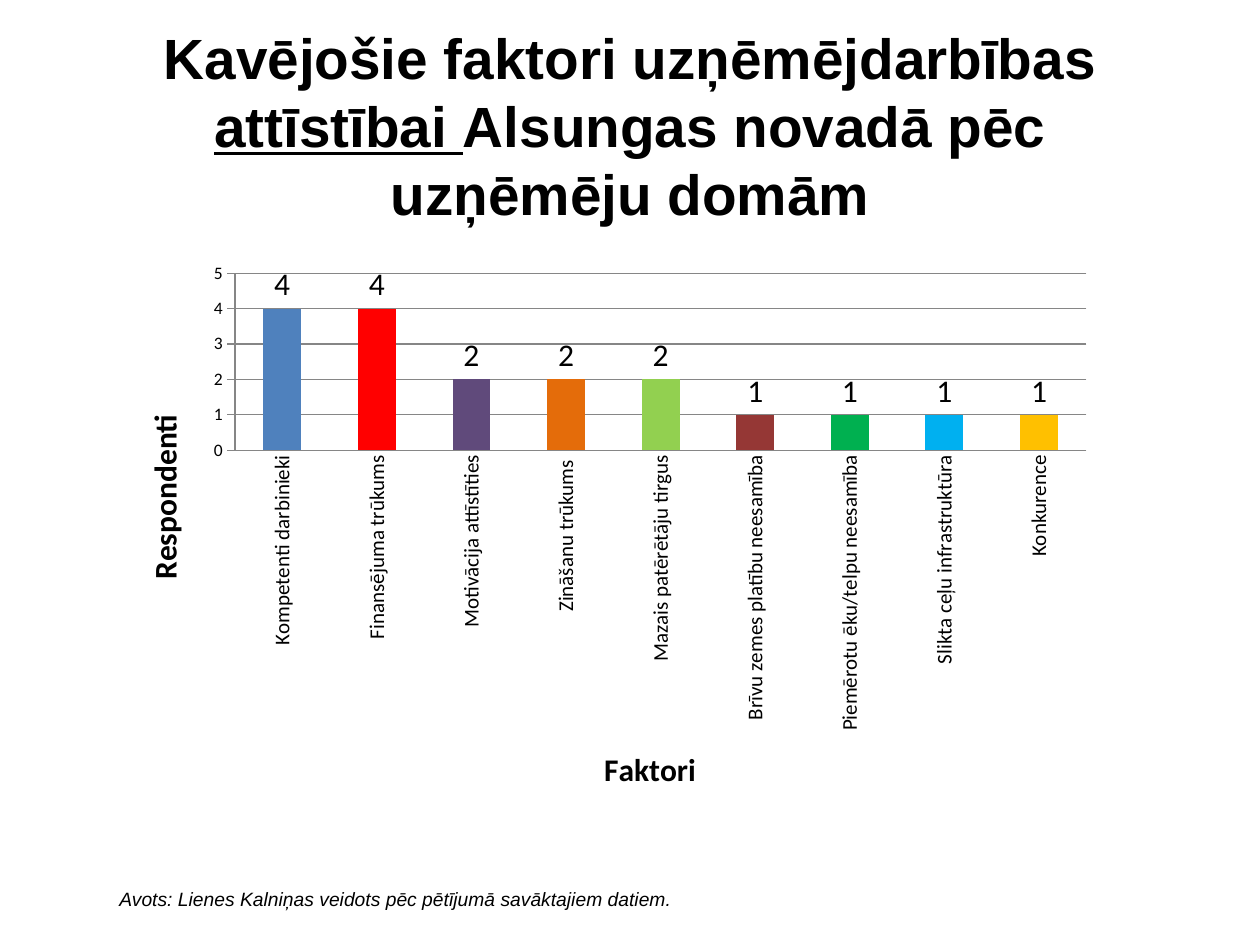
from pptx import Presentation
from pptx.chart.data import CategoryChartData
from pptx.dml.color import RGBColor
from pptx.enum.chart import XL_CHART_TYPE, XL_LABEL_POSITION, XL_TICK_MARK
from pptx.enum.text import MSO_ANCHOR, MSO_AUTO_SIZE, PP_ALIGN
from pptx.util import Pt

COLUMN = XL_CHART_TYPE.COLUMN_CLUSTERED
OUT_END = XL_LABEL_POSITION.OUTSIDE_END
NO_TICK = XL_TICK_MARK.NONE
OUT_TICK = XL_TICK_MARK.OUTSIDE
MIDDLE = MSO_ANCHOR.MIDDLE
FIT = MSO_AUTO_SIZE.SHAPE_TO_FIT_TEXT
NO_FIT = MSO_AUTO_SIZE.NONE
CENTER = PP_ALIGN.CENTER

HEX = {
    "text": "000000", "grid": "868686", "blue": "4F81BD", "red": "FF0000",
    "plum": "604A7B", "orange": "E46C0A", "lime": "92D050", "brown": "953735",
    "green": "00B050", "sky": "00B0F0", "gold": "FFC000",
}
BARS = [
    ("Kompetenti darbinieki", 4, "blue"),
    ("Finansējuma trūkums", 4, "red"),
    ("Motivācija attīstīties", 2, "plum"),
    ("Zināšanu trūkums ", 2, "orange"),
    ("Mazais patērētāju tirgus", 2, "lime"),
    ("Brīvu zemes platību neesamība", 1, "brown"),
    ("Piemērotu ēku/telpu neesamība", 1, "green"),
    ("Slikta ceļu infrastruktūra", 1, "sky"),
    ("Konkurence", 1, "gold"),
]


def shade(name):
    return RGBColor.from_string(HEX[name])


def style(font, size, face="Calibri", bold=False, italic=False, under=False):
    font.name, font.size = face, Pt(size)
    font.bold, font.italic, font.underline = bold, italic, under
    font.color.rgb = shade("text")


def write(para, text, **look):
    run = para.add_run()
    run.text = text
    style(run.font, **look)


def add_title(slide):
    title = slide.shapes.title
    title.left, title.top = Pt(36), Pt(49)
    title.width, title.height = Pt(648), Pt(90.7)
    frame = title.text_frame
    frame.word_wrap, frame.auto_size = True, NO_FIT
    frame.vertical_anchor = MIDDLE
    frame.margin_bottom = Pt(49.5)
    para = frame.paragraphs[0]
    para.alignment, para.line_spacing = CENTER, Pt(39)
    look = {"size": 32.4, "face": "Arial", "bold": True}
    write(para, "Kavējošie faktori uzņēmējdarbības ", **look)
    write(para, "attīstībai ", under=True, **look)
    write(para, "Alsungas novadā pēc uzņēmēju domām", **look)


def set_axis(axis, name, size, tick):
    para = axis.axis_title.text_frame.paragraphs[0]
    write(para, name, size=18, bold=True)
    axis.major_tick_mark, axis.minor_tick_mark = tick, NO_TICK
    style(axis.tick_labels.font, size)
    axis.format.line.color.rgb = shade("grid")


def add_bars(slide):
    data = CategoryChartData()
    data.categories = [name for name, _, _ in BARS]
    data.add_series("Series 1", [count for _, count, _ in BARS])
    chart = slide.shapes.add_chart(
        COLUMN, Pt(65.5), Pt(144), Pt(566.6), Pt(324.7), data).chart
    chart.has_legend = chart.has_title = False
    style(chart.font, 10)

    base, scale = chart.category_axis, chart.value_axis
    set_axis(base, "Faktori", 12, NO_TICK)
    base._element.txPr.bodyPr.set("rot", "-5400000")
    base._element.txPr.bodyPr.set("vert", "horz")
    set_axis(scale, "Respondenti", 10, OUT_TICK)
    scale.minimum_scale, scale.maximum_scale, scale.major_unit = 0, 5, 1
    scale.major_gridlines.format.line.color.rgb = shade("grid")

    plot = chart.plots[0]
    plot.gap_width, plot.vary_by_categories = 150, False
    series = plot.series[0]
    for i, (_, _, color) in enumerate(BARS):
        fill = series.points[i].format.fill
        fill.solid()
        fill.fore_color.rgb = shade(color)
    labels = series.data_labels
    labels.show_value, labels.position = True, OUT_END
    style(labels.font, 18)


def add_note(slide):
    box = slide.shapes.add_textbox(Pt(59.8), Pt(503.3), Pt(332.6), Pt(20.9))
    frame = box.text_frame
    frame.word_wrap, frame.auto_size = False, FIT
    frame.vertical_anchor = MIDDLE
    para = frame.paragraphs[0]
    para.alignment = CENTER
    write(para, "Avots: Lienes Kalniņas veidots pēc pētījumā savāktajiem datiem.",
          size=11, face="Arial", italic=True)


def main():
    deck = Presentation()
    deck.slide_width, deck.slide_height = Pt(720), Pt(540)
    slide = deck.slides.add_slide(deck.slide_layouts[5])
    add_title(slide)
    add_bars(slide)
    add_note(slide)
    deck.save("out.pptx")


if __name__ == "__main__":
    main()
